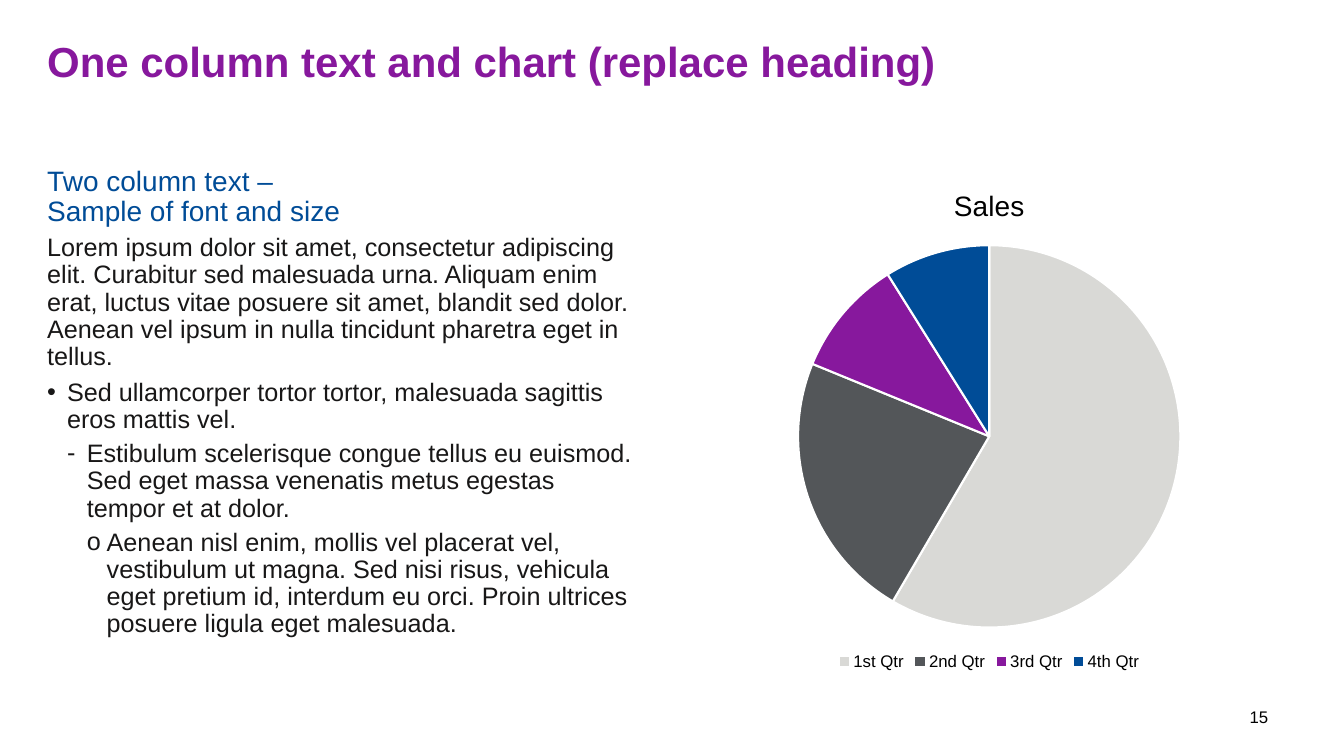
from lxml import etree
from pptx import Presentation
from pptx.chart.data import CategoryChartData
from pptx.dml.color import RGBColor
from pptx.enum import chart as kinds, text
from pptx.oxml.ns import qn
from pptx.util import Cm, Pt

FONT = "Arial"
BLACK, INK, PURPLE, BLUE, WHITE = "000000", "181717", "87189D", "004C97", "FFFFFF"
LEFT, RIGHT, TOP = 1.19, 32.54, 4.22
STEP = 0.5  # indent of each bullet level, cm

HEAD = "One column text and chart (replace heading)"
PAGE = "15"

# text, size, colour, space before, bullet, level
BODY = [
    ("Two column text – \vSample of font and size", 20, BLUE, 10, None, 0),
    ("Lorem ipsum dolor sit amet, consectetur adipiscing elit. Curabitur sed "
     "malesuada urna. Aliquam enim erat, luctus vitae posuere sit amet, blandit "
     "sed dolor. Aenean vel ipsum in nulla tincidunt pharetra eget in tellus.",
     18, INK, 5, None, 0),
    ("Sed ullamcorper tortor tortor, malesuada sagittis eros mattis vel.",
     18, INK, 6, "•", 1),
    ("Estibulum scelerisque congue tellus eu euismod. Sed eget massa venenatis "
     "metus egestas tempor et at dolor.", 18, INK, 5, "-", 2),
    ("Aenean nisl enim, mollis vel placerat vel, vestibulum ut magna. Sed nisi "
     "risus, vehicula eget pretium id, interdum eu orci. Proin ultrices posuere "
     "ligula eget malesuada.", 18, INK, 5, "o", 3),
]

SALES = [
    ("1st Qtr", 59, "D9D9D6"),
    ("2nd Qtr", 23, "535659"),
    ("3rd Qtr", 10, PURPLE),
    ("4th Qtr", 9, BLUE),
]


def rgb(code):
    return RGBColor.from_string(code)


def style(font, size, color, bold=False):
    font.name, font.size, font.bold = FONT, Pt(size), bold
    font.color.rgb = rgb(color)


def frame(slide, x, y, w, h):
    """Add a wrapping text box without margins, in cm."""
    box = slide.shapes.add_textbox(Cm(x), Cm(y), Cm(w), Cm(h)).text_frame
    box.word_wrap = True
    box.margin_left = box.margin_right = box.margin_top = box.margin_bottom = 0
    return box


def bullet(para, mark, level):
    """Give a paragraph a hanging bullet."""
    props = para._p.get_or_add_pPr()
    props.set("marL", str(Cm(STEP * level)))
    props.set("indent", str(-Cm(STEP)))
    etree.SubElement(props, qn("a:buFont")).set("typeface", FONT)
    etree.SubElement(props, qn("a:buChar")).set("char", mark)


def add_body(slide):
    box = frame(slide, LEFT, TOP, 14.94, 12.8)
    for i, (words, size, color, gap, mark, level) in enumerate(BODY):
        para = box.add_paragraph() if i else box.paragraphs[0]
        para.text = words
        para.line_spacing = 0.9
        para.space_before = Pt(gap)
        style(para.font, size, color)
        if mark:
            bullet(para, mark, level)


def add_pie(slide):
    data = CategoryChartData()
    data.categories = [name for name, _, _ in SALES]
    data.add_series("Sales", [value for _, value, _ in SALES])
    x = 17.32
    chart = slide.shapes.add_chart(
        kinds.XL_CHART_TYPE.PIE, Cm(x), Cm(TOP), Cm(RIGHT - x), Cm(12.78), data).chart
    style(chart.font, 10, BLACK)
    chart.has_title = True
    title = chart.chart_title.text_frame
    title.text = "Sales"
    style(title.paragraphs[0].font, 20, BLACK)
    chart.has_legend = True
    chart.legend.position = kinds.XL_LEGEND_POSITION.BOTTOM
    chart.legend.include_in_layout = False
    style(chart.legend.font, 12, BLACK)
    plot = chart.plots[0]
    plot.vary_by_categories = True
    for i, (_, _, color) in enumerate(SALES):
        form = plot.series[0].points[i].format
        form.fill.solid()
        form.fill.fore_color.rgb = rgb(color)
        form.line.color.rgb = rgb(WHITE)
        form.line.width = Pt(1.5)


def main():
    deck = Presentation()
    deck.slide_width, deck.slide_height = Cm(33.87), Cm(19.05)
    slide = deck.slides.add_slide(deck.slide_layouts[6])

    head = frame(slide, LEFT, 1.04, RIGHT - LEFT, 2.18).paragraphs[0]
    head.text = HEAD
    head.line_spacing = 0.9
    style(head.font, 30, PURPLE, True)

    add_body(slide)
    add_pie(slide)

    wide = 1.63
    foot = frame(slide, RIGHT - wide, 17.55, wide, 1.02)
    foot.vertical_anchor = text.MSO_ANCHOR.MIDDLE
    page = foot.paragraphs[0]
    page.text = PAGE
    page.alignment = text.PP_ALIGN.CENTER
    style(page.font, 12, BLACK)

    deck.save("out.pptx")


if __name__ == "__main__":
    main()
